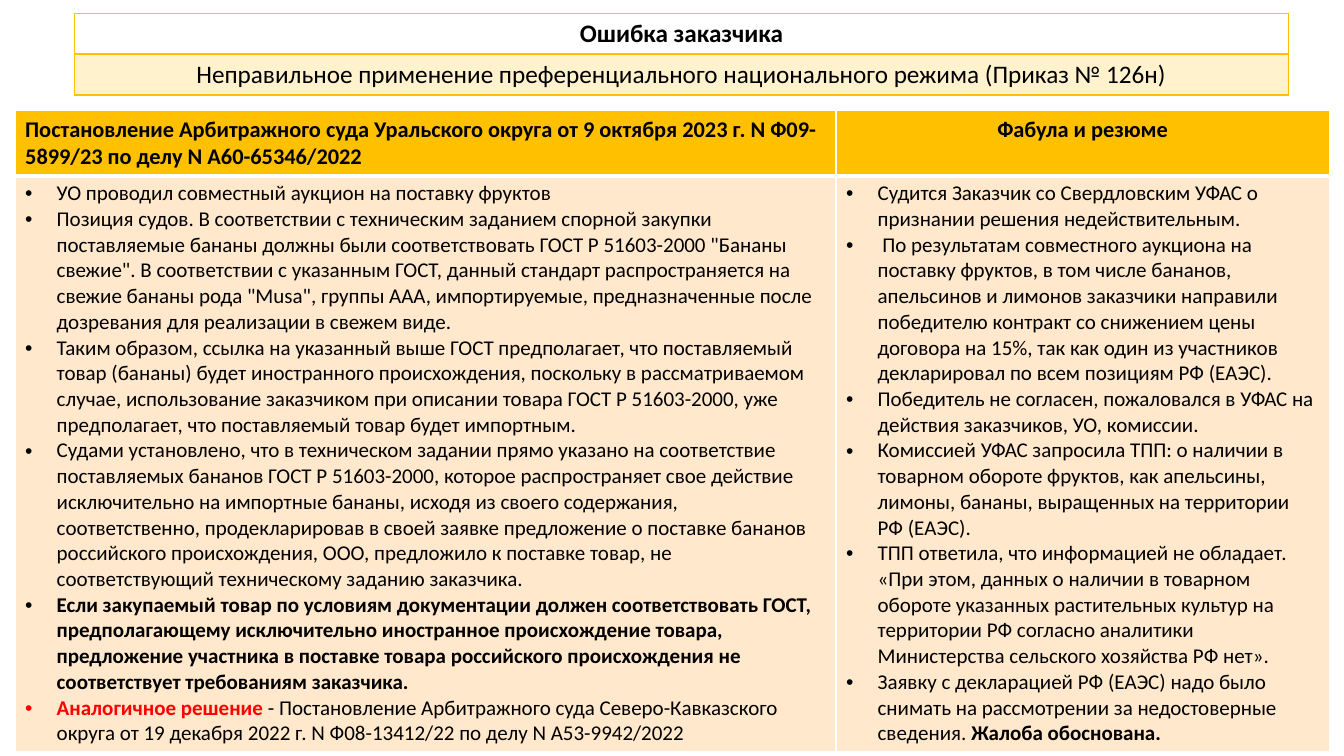
from lxml import etree
from pptx import Presentation
from pptx.dml.color import RGBColor
from pptx.enum.text import PP_ALIGN
from pptx.oxml.ns import qn
from pptx.util import Pt

CENTER, LEFT = PP_ALIGN.CENTER, PP_ALIGN.LEFT
BLACK = RGBColor(0x00, 0x00, 0x00)
WHITE = RGBColor(0xFF, 0xFF, 0xFF)
RED = RGBColor(0xFF, 0x00, 0x00)
GOLD = RGBColor(0xFF, 0xC0, 0x00)
PEACH = RGBColor(0xFF, 0xE8, 0xCC)

MISTAKE = "Ошибка заказчика"
MISTAKE_KIND = "Неправильное применение преференциального национального режима (Приказ № 126н)"
RULING = ("Постановление Арбитражного суда Уральского округа от 9 октября 2023 г. "
          "N Ф09-5899/23 по делу N А60-65346/2022")
SUMMARY = "Фабула и резюме"

COURT_POINTS = [
    [("УО проводил совместный аукцион на поставку фруктов", False, BLACK)],
    [("Позиция судов. В соответствии с техническим заданием спорной закупки поставляемые бананы "
      "должны были соответствовать ГОСТ Р 51603-2000 \"Бананы свежие\". В соответствии с указанным "
      "ГОСТ, данный стандарт распространяется на свежие бананы рода \"Musa\", группы AAA, "
      "импортируемые, предназначенные после дозревания для реализации в свежем виде.", False, BLACK)],
    [("Таким образом, ссылка на указанный выше ГОСТ предполагает, что поставляемый товар (бананы) "
      "будет иностранного происхождения, поскольку в рассматриваемом случае, использование "
      "заказчиком при описании товара ГОСТ Р 51603-2000, уже предполагает, что поставляемый товар "
      "будет импортным.", False, BLACK)],
    [("Судами установлено, что в техническом задании прямо указано на соответствие поставляемых "
      "бананов ГОСТ Р 51603-2000, которое распространяет свое действие исключительно на импортные "
      "бананы, исходя из своего содержания, соответственно, продекларировав в своей заявке "
      "предложение о поставке бананов российского происхождения, ООО, предложило к поставке товар, "
      "не соответствующий техническому заданию заказчика.", False, BLACK)],
    [("Если закупаемый товар по условиям документации должен соответствовать ГОСТ, предполагающему "
      "исключительно иностранное происхождение товара, предложение участника в поставке товара "
      "российского происхождения не соответствует требованиям заказчика.", True, BLACK)],
    [("Аналогичное решение ", True, RED),
     ("- Постановление Арбитражного суда Северо-Кавказского округа от 19 декабря 2022 г. "
      "N Ф08-13412/22 по делу N А53-9942/2022", False, BLACK)],
]

CASE_POINTS = [
    [("Судится Заказчик со Свердловским УФАС о признании решения недействительным.", False, BLACK)],
    [(" По результатам совместного аукциона на поставку фруктов, в том числе бананов, апельсинов и "
      "лимонов заказчики направили победителю контракт со снижением цены договора на 15%, так как "
      "один из участников декларировал по всем позициям РФ (ЕАЭС).", False, BLACK)],
    [("Победитель не согласен, пожаловался в УФАС на действия заказчиков, УО, комиссии.",
      False, BLACK)],
    [("Комиссией УФАС запросила ТПП: о наличии в товарном обороте фруктов, как апельсины, лимоны, "
      "бананы, выращенных на территории РФ (ЕАЭС).", False, BLACK)],
    [("ТПП ответила, что информацией не обладает. «При этом, данных о наличии в товарном обороте "
      "указанных растительных культур на территории РФ согласно аналитики Министерства сельского "
      "хозяйства РФ нет».", False, BLACK)],
    [("Заявку с декларацией РФ (ЕАЭС) надо было снимать на рассмотрении за недостоверные сведения. ",
      False, BLACK),
     ("Жалоба обоснована.", True, BLACK)],
]


class SlideBuilder:
    font = "Calibri"
    bullet_indent = Pt(22.5)

    def __init__(self, slide):
        self.slide = slide

    def table(self, left, top, widths, heights):
        frame = self.slide.shapes.add_table(
            len(heights), len(widths), Pt(left), Pt(top), Pt(sum(widths)), Pt(sum(heights)))
        table = frame.table
        table.first_row = False
        table.horz_banding = False
        for column, width in zip(table.columns, widths):
            column.width = Pt(width)
        for row, height in zip(table.rows, heights):
            row.height = Pt(height)
        return table

    def fill(self, cell, color, opacity=100):
        if color is None:
            cell.fill.background()
            return
        cell.fill.solid()
        cell.fill.fore_color.rgb = color
        if opacity < 100:
            tint = cell._tc.tcPr.find(qn("a:solidFill"))[0]
            etree.SubElement(tint, qn("a:alpha"), val=str(opacity * 1000))

    def borders(self, cell, color, top=1, bottom=1):
        sides = {"a:lnL": 1, "a:lnR": 1, "a:lnT": top, "a:lnB": bottom}
        for position, (side, width) in enumerate(sides.items()):
            line = etree.Element(qn(side), w=str(Pt(width)))
            solid = etree.SubElement(line, qn("a:solidFill"))
            etree.SubElement(solid, qn("a:srgbClr"), val=str(color))
            cell._tc.tcPr.insert(position, line)

    def bullet(self, paragraph):
        properties = paragraph._p.get_or_add_pPr()
        properties.set("marL", str(self.bullet_indent))
        properties.set("indent", str(-self.bullet_indent))
        etree.SubElement(properties, qn("a:buFont"), typeface="Arial")
        etree.SubElement(properties, qn("a:buChar"), char="•")

    def text(self, cell, paragraphs, size, align=LEFT, bulleted=False):
        frame = cell.text_frame
        for index, runs in enumerate(paragraphs):
            paragraph = frame.add_paragraph() if index else frame.paragraphs[0]
            paragraph.alignment = align
            if bulleted:
                self.bullet(paragraph)
            for words, bold, color in runs:
                run = paragraph.add_run()
                run.text = words
                run.font.name = self.font
                run.font.size = Pt(size)
                run.font.bold = bold
                run.font.color.rgb = color


def main():
    presentation = Presentation()
    presentation.slide_width = Pt(960)
    presentation.slide_height = Pt(540)
    builder = SlideBuilder(presentation.slides.add_slide(presentation.slide_layouts[6]))

    heading = builder.table(53.3, 9.4, [867], [29.2, 29.2])
    heading_rows = [(MISTAKE, True, None, 100, 1, 2), (MISTAKE_KIND, False, GOLD, 20, 2, 1)]
    for row, (words, bold, color, opacity, top, bottom) in enumerate(heading_rows):
        cell = heading.cell(row, 0)
        builder.text(cell, [[(words, bold, BLACK)]], 18, CENTER)
        builder.fill(cell, color, opacity)
        builder.borders(cell, GOLD, top, bottom)

    ruling = builder.table(10.8, 79.2, [586.4, 352.4], [46, 411])
    ruling_columns = [(RULING, LEFT, COURT_POINTS), (SUMMARY, CENTER, CASE_POINTS)]
    for column, (title, align, points) in enumerate(ruling_columns):
        header, body = ruling.cell(0, column), ruling.cell(1, column)
        builder.text(header, [[(title, True, BLACK)]], 16, align)
        builder.fill(header, GOLD)
        builder.borders(header, WHITE, bottom=3)
        builder.text(body, points, 15, bulleted=True)
        builder.fill(body, PEACH)
        builder.borders(body, WHITE, top=3)

    presentation.save("out.pptx")


if __name__ == "__main__":
    main()
